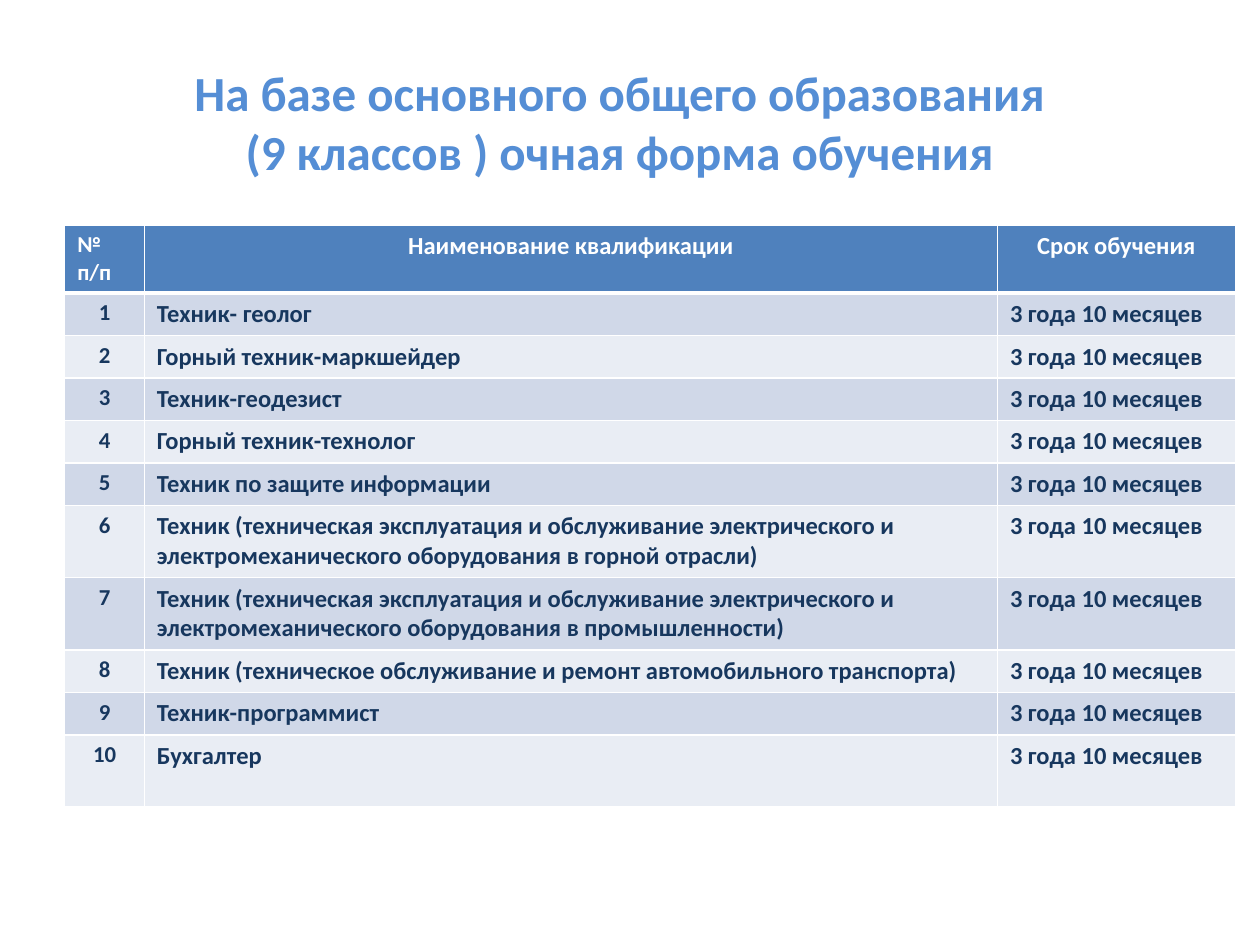
import dataclasses

import lxml.etree
import pptx
import pptx.dml.color
import pptx.enum.text
import pptx.oxml.ns
import pptx.util

Pt = pptx.util.Pt
ALIGN = pptx.enum.text.PP_ALIGN


@dataclasses.dataclass(frozen=True)
class Theme:
    """Colours, type sizes and line widths of the slide."""

    font: str = "Calibri"
    title: str = "558ED5"
    header: str = "4F81BD"
    bands: tuple = ("D0D8E8", "E9EDF4")
    white: str = "FFFFFF"
    ink: str = "17375E"
    title_size: int = 28
    body_size: int = 14
    number_size: int = 13
    thin: int = 1
    thick: int = 3


THEME = Theme()
TITLE = "На базе основного общего образования\n(9 классов ) очная форма обучения"
HEADINGS = ("№ п/п", "Наименование квалификации", "Срок обучения")
TERM = "3 года 10 месяцев"
EQUIPMENT = "Техник (техническая эксплуатация и обслуживание электрического и электромеханического оборудования в "
QUALIFICATIONS = (
    "Техник- геолог",
    "Горный техник-маркшейдер",
    "Техник-геодезист",
    "Горный техник-технолог",
    "Техник по защите информации",
    EQUIPMENT + "горной отрасли)",
    EQUIPMENT + "промышленности)",
    "Техник (техническое обслуживание и ремонт автомобильного транспорта)",
    "Техник-программист",
    "Бухгалтер",
)
COLUMN_WIDTHS = (45.5, 487.5, 136)
HEADER_HEIGHT, ROW_HEIGHT, TALL_HEIGHT = 38.5, 24.2, 41.2
TALL_ROWS = (6, 7, 10)


def write_text(text_frame, text, size=THEME.body_size, color=THEME.ink, align=ALIGN.LEFT):
    """Write bold text into a frame, with a line break at each newline."""
    paragraph = text_frame.paragraphs[0]
    paragraph.alignment = align
    for index, line in enumerate(text.split("\n")):
        if index:
            paragraph.add_line_break()
        run = paragraph.add_run()
        run.text = line
        run.font.name = THEME.font
        run.font.size = Pt(size)
        run.font.bold = True
        run.font.color.rgb = pptx.dml.color.RGBColor.from_string(color)


def add_title(slide):
    """Place and fill the title placeholder."""
    title = slide.shapes.title
    title.left, title.top, title.width, title.height = Pt(48), Pt(21), Pt(612), Pt(96.5)
    title.text_frame.word_wrap = True
    title.text_frame.vertical_anchor = pptx.enum.text.MSO_ANCHOR.MIDDLE
    write_text(title.text_frame, TITLE, size=THEME.title_size, color=THEME.title, align=ALIGN.CENTER)


def set_borders(cell, top=THEME.thin, bottom=THEME.thin):
    """Draw white borders around a cell."""
    properties = cell._tc.get_or_add_tcPr()
    sides = {"lnL": THEME.thin, "lnR": THEME.thin, "lnT": top, "lnB": bottom}
    for side, width in sides.items():
        line = lxml.etree.SubElement(properties, pptx.oxml.ns.qn(f"a:{side}"), w=str(Pt(width)))
        fill = lxml.etree.SubElement(line, pptx.oxml.ns.qn("a:solidFill"))
        lxml.etree.SubElement(fill, pptx.oxml.ns.qn("a:srgbClr"), val=THEME.white)


def format_cell(cell, text, fill, top=THEME.thin, bottom=THEME.thin, **text_format):
    """Give a cell its borders, fill and text."""
    set_borders(cell, top, bottom)
    cell.fill.solid()
    cell.fill.fore_color.rgb = pptx.dml.color.RGBColor.from_string(fill)
    write_text(cell.text_frame, text, **text_format)


def add_qualification_table(slide):
    """Add the table of qualifications and study terms."""
    heights = [HEADER_HEIGHT] + [
        TALL_HEIGHT if number in TALL_ROWS else ROW_HEIGHT
        for number in range(1, len(QUALIFICATIONS) + 1)
    ]
    table = slide.shapes.add_table(
        len(heights), len(COLUMN_WIDTHS), Pt(37), Pt(128.5), Pt(sum(COLUMN_WIDTHS)), Pt(sum(heights))
    ).table
    for column, width in zip(table.columns, COLUMN_WIDTHS):
        column.width = Pt(width)
    for row, height in zip(table.rows, heights):
        row.height = Pt(height)

    sizes = (THEME.number_size, THEME.body_size, THEME.body_size)
    header_aligns = (ALIGN.LEFT, ALIGN.CENTER, ALIGN.CENTER)
    body_aligns = (ALIGN.CENTER, ALIGN.LEFT, ALIGN.LEFT)
    for column, heading in enumerate(HEADINGS):
        format_cell(table.cell(0, column), heading, THEME.header, bottom=THEME.thick,
                    size=sizes[column], color=THEME.white, align=header_aligns[column])
    for number, qualification in enumerate(QUALIFICATIONS, 1):
        top = THEME.thick if number == 1 else THEME.thin
        for column, text in enumerate((str(number), qualification, TERM)):
            format_cell(table.cell(number, column), text, THEME.bands[(number - 1) % 2], top=top,
                        size=sizes[column], align=body_aligns[column])


def main():
    """Build and save the presentation."""
    presentation = pptx.Presentation()
    presentation.slide_width, presentation.slide_height = Pt(720), Pt(540)
    slide = presentation.slides.add_slide(presentation.slide_layouts.get_by_name("Title Only"))
    add_title(slide)
    add_qualification_table(slide)
    presentation.save("out.pptx")


if __name__ == "__main__":
    main()
